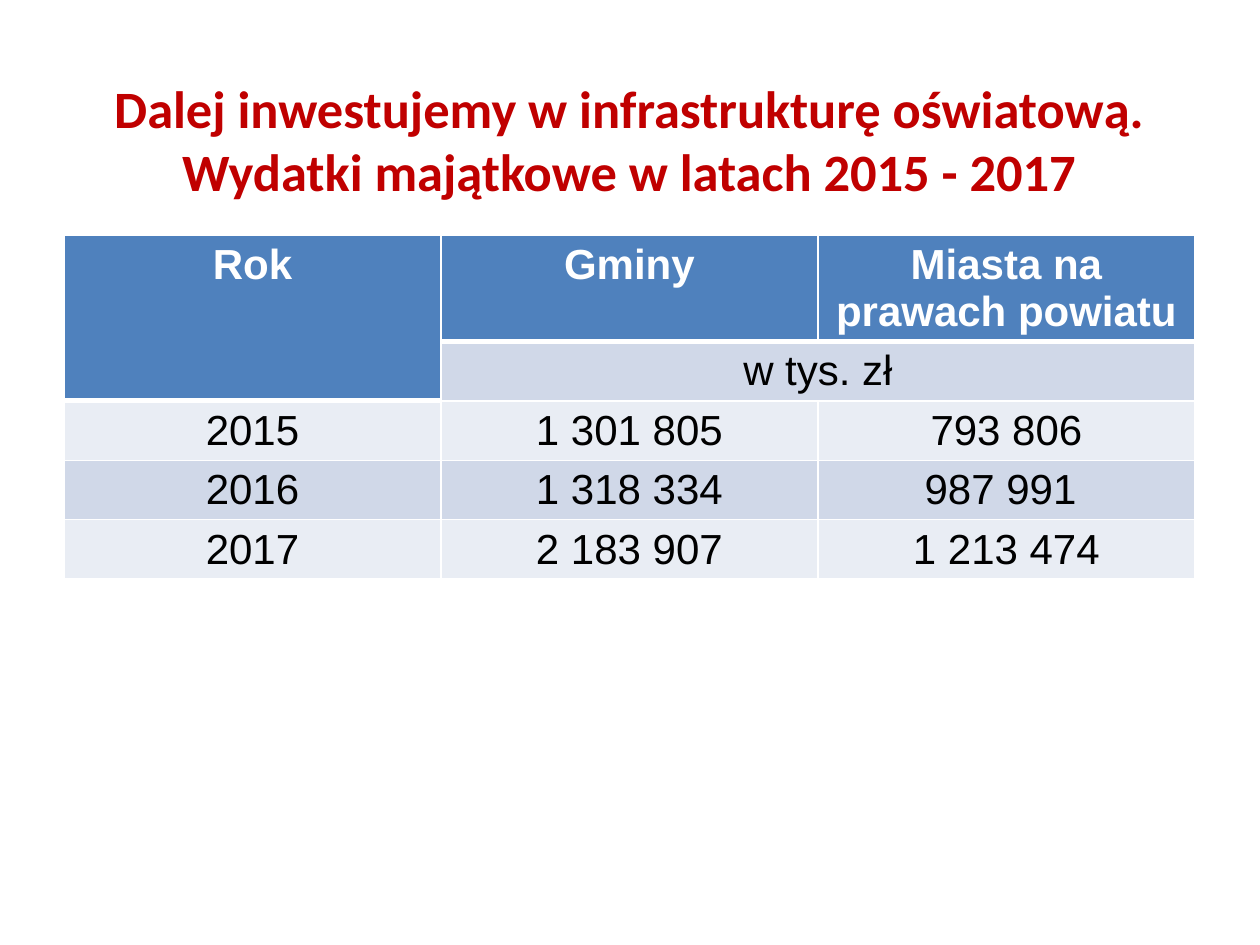
from dataclasses import dataclass

from lxml.etree import SubElement
from pptx import Presentation
from pptx.dml.color import RGBColor
from pptx.enum.text import MSO_ANCHOR, PP_ALIGN
from pptx.oxml.ns import qn
from pptx.util import Pt

EMU_PER_PX = 914400 // 126


@dataclass(frozen=True)
class Theme:
    title_font: str = "Calibri"
    table_font: str = "Arial"
    title_size: int = 30
    table_size: int = 24
    title: str = "C00000"
    header: str = "4F81BD"
    bands: tuple = ("E9EDF4", "D0D8E8")
    light: str = "FFFFFF"
    dark: str = "000000"
    thin: int = 1
    thick: int = 3


THEME = Theme()
HEADER_HEIGHT, ROW_HEIGHT = 106, 59
COLUMN_WIDTH = 377
ROWS = [
    ("Rok", "Gminy", "Miasta na prawach powiatu "),
    ("", "w tys. zł", ""),
    ("2015", "1 301 805", "793 806"),
    ("2016", "1 318 334", "987 991 "),
    ("2017", "2 183 907", "1 213 474"),
]


def px(length):
    return length * EMU_PER_PX


def write_text(frame, text, *, font, size, color, bold=False):
    para = frame.paragraphs[0]
    para.alignment = PP_ALIGN.CENTER
    span = para.add_run()
    span.text = text
    span.font.name = font
    span.font.size = Pt(size)
    span.font.bold = bold
    span.font.color.rgb = RGBColor.from_string(color)


def add_title(page, text):
    title = page.shapes.title
    title.left, title.top, title.width, title.height = map(px, (64, 55, 1131, 169))
    frame = title.text_frame
    frame.word_wrap = True
    frame.vertical_anchor = MSO_ANCHOR.MIDDLE
    write_text(frame, text, font=THEME.title_font, size=THEME.title_size,
               color=THEME.title, bold=True)


def set_borders(cell, *, top, bottom):
    properties = cell._tc.get_or_add_tcPr()
    widths = {"L": THEME.thin, "R": THEME.thin, "T": top, "B": bottom}
    for side, width in widths.items():
        line = SubElement(properties, qn(f"a:ln{side}"), w=str(Pt(width)))
        fill = SubElement(line, qn("a:solidFill"))
        SubElement(fill, qn("a:srgbClr"), val=THEME.light)


def format_cell(cell, text, row, column):
    # The first column's heading spans two rows, the others one
    last_header_row = 1 if column == 0 else 0
    is_header = row <= last_header_row
    set_borders(
        cell,
        top=THEME.thick if row == last_header_row + 1 else THEME.thin,
        bottom=THEME.thick if row == last_header_row else THEME.thin,
    )
    cell.fill.solid()
    cell.fill.fore_color.rgb = RGBColor.from_string(
        THEME.header if is_header else THEME.bands[row % 2])
    if text:
        write_text(cell.text_frame, text, font=THEME.table_font,
                   size=THEME.table_size, bold=is_header,
                   color=THEME.light if is_header else THEME.dark)


def add_spending_table(page, rows):
    heights = [HEADER_HEIGHT] + [ROW_HEIGHT] * (len(rows) - 1)
    columns = len(rows[0])
    table = page.shapes.add_table(
        len(rows), columns, px(64), px(235),
        px(COLUMN_WIDTH * columns), px(sum(heights))).table
    table.horz_banding = False
    for column in table.columns:
        column.width = px(COLUMN_WIDTH)
    for row, height in zip(table.rows, heights):
        row.height = px(height)
    for row, texts in enumerate(rows):
        for column, text in enumerate(texts):
            format_cell(table.cell(row, column), text, row, column)
    # Year heading over both header rows, unit across the amounts
    table.cell(0, 0).merge(table.cell(1, 0))
    table.cell(1, 1).merge(table.cell(1, 2))


def main():
    deck = Presentation()
    deck.slide_width, deck.slide_height = px(1260), px(945)
    page = deck.slides.add_slide(deck.slide_layouts[5])
    add_title(page, "Dalej inwestujemy w infrastrukturę oświatową. "
                    "Wydatki majątkowe w latach 2015 - 2017")
    add_spending_table(page, ROWS)
    deck.save("out.pptx")


if __name__ == "__main__":
    main()
